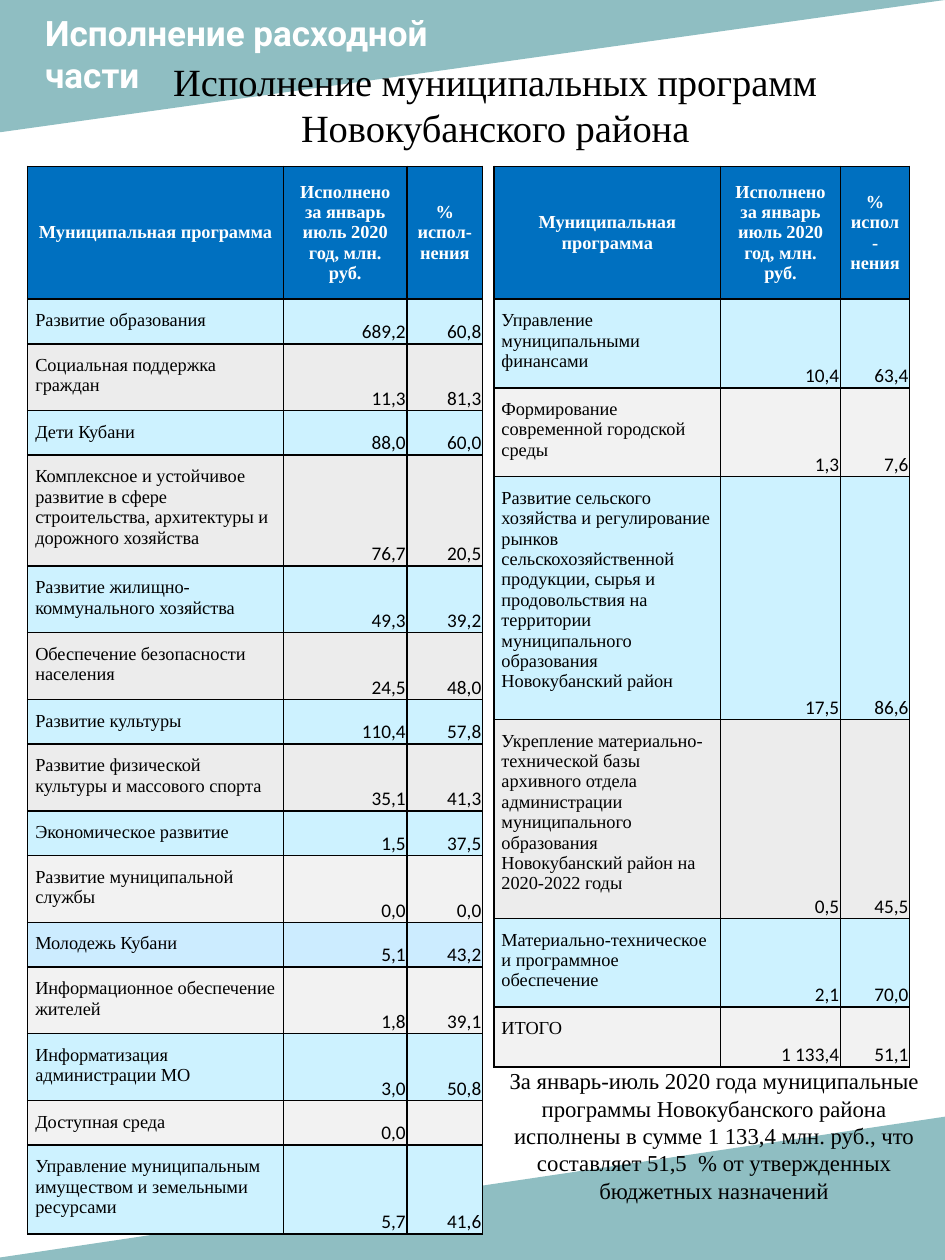
from lxml.etree import SubElement
from pptx import Presentation
from pptx.dml.color import RGBColor
from pptx.enum.shapes import MSO_SHAPE
from pptx.enum.text import MSO_ANCHOR, MSO_AUTO_SIZE, PP_ALIGN
from pptx.oxml.ns import qn
from pptx.util import Inches, Pt

TEAL = RGBColor(0x51, 0x9A, 0xA0)
HEADER_BLUE = RGBColor(0x00, 0x70, 0xC0)
CYAN = RGBColor(0xCD, 0xF2, 0xFF)
PALE_BLUE = RGBColor(0xCC, 0xEC, 0xFF)
GREY = RGBColor(0xEC, 0xEC, 0xEC)
LIGHT_GREY = RGBColor(0xF2, 0xF2, 0xF2)
WHITE = RGBColor(0xFF, 0xFF, 0xFF)
BLACK = RGBColor(0x00, 0x00, 0x00)

SERIF = "Times New Roman"
SECTION = ["Исполнение расходной", "части"]
TITLE = "Исполнение муниципальных программ Новокубанского района"
SUMMARY = ("За январь-июль 2020 года муниципальные программы Новокубанского района "
           "исполнены в сумме 1 133,4 млн. руб., что составляет 51,5  % "
           "от утвержденных бюджетных назначений")
HEADER = ("Муниципальная программа", "Исполнено за январь июль 2020 год, млн. руб.",
          "% испол-нения")

# Each row: programme, spent, percent, lines of text, fill
LEFT_ROWS = [
    ("Развитие образования", "689,2", "60,8", 1, CYAN),
    ("Социальная поддержка граждан", "11,3", "81,3", 2, GREY),
    ("Дети Кубани", "88,0", "60,0", 1, CYAN),
    ("Комплексное и устойчивое развитие в сфере строительства, архитектуры "
     "и дорожного хозяйства", "76,7", "20,5", 4, GREY),
    ("Развитие жилищно-коммунального хозяйства", "49,3", "39,2", 2, CYAN),
    ("Обеспечение безопасности населения", "24,5", "48,0", 2, GREY),
    ("Развитие культуры", "110,4", "57,8", 1, CYAN),
    ("Развитие физической культуры и массового спорта", "35,1", "41,3", 2, GREY),
    ("Экономическое развитие", "1,5", "37,5", 1, CYAN),
    ("Развитие муниципальной службы", "0,0", "0,0", 2, LIGHT_GREY),
    ("Молодежь Кубани", "5,1", "43,2", 1, PALE_BLUE),
    ("Информационное обеспечение жителей", "1,8", "39,1", 2, LIGHT_GREY),
    ("Информатизация администрации МО", "3,0", "50,8", 2, CYAN),
    ("Доступная среда", "0,0", "", 1, LIGHT_GREY),
    ("Управление муниципальным имуществом и земельными ресурсами",
     "5,7", "41,6", 3, CYAN),
]
RIGHT_ROWS = [
    ("Управление муниципальными финансами", "10,4", "63,4", 3, CYAN),
    ("Формирование современной городской среды", "1,3", "7,6", 3, LIGHT_GREY),
    ("Развитие сельского хозяйства и регулирование рынков сельскохозяйственной "
     "продукции, сырья и продовольствия на территории муниципального образования "
     "Новокубанский район", "17,5", "86,6", 10, CYAN),
    ("Укрепление материально-технической базы архивного отдела администрации "
     "муниципального образования Новокубанский район на 2020-2022 годы",
     "0,5", "45,5", 8, GREY),
    ("Материально-техническое и программное обеспечение", "2,1", "70,0", 3, CYAN),
    ("ИТОГО", "1 133,4", "51,1", 1.7, LIGHT_GREY),
]
# Left edge, column widths, rows
TABLES = [(0.22, (2.03, 0.98, 0.6), LEFT_ROWS), (3.92, (1.8, 0.95, 0.55), RIGHT_ROWS)]
TABLE_TOP = 1.32
HEADER_LINES = 5
ROW_PADDING, LINE_HEIGHT = 0.18, 0.174
TEXT_MARGINS = (0.06, 0.09, 0.06, 0.09)
NUMBER_MARGINS = (0.01, 0.01, 0.01, 0)


def add_corner(page, place, flip):
    corner = page.shapes.add_shape(MSO_SHAPE.RIGHT_TRIANGLE, *map(Inches, place))
    corner.shadow.inherit = False
    corner.line.fill.background()
    corner.fill.solid()
    corner.fill.fore_color.rgb = TEAL
    color = corner.fill._xPr.find(qn("a:solidFill"))[0]
    SubElement(color, qn("a:alpha"), val="64000")
    corner.element.spPr.find(qn("a:xfrm")).set(flip, "1")


def style(paragraph, size, font, color, bold=False, align=PP_ALIGN.LEFT):
    paragraph.alignment = align
    paragraph.font.size = Pt(size)
    paragraph.font.name = font
    paragraph.font.color.rgb = color
    paragraph.font.bold = bold


def fill_text(box, place, lines, *look):
    box.left, box.top, box.width, box.height = map(Inches, place)
    frame = box.text_frame
    frame.word_wrap = True
    frame.auto_size = MSO_AUTO_SIZE.SHAPE_TO_FIT_TEXT
    frame.vertical_anchor = MSO_ANCHOR.TOP
    frame.text = "\n".join(lines)
    for paragraph in frame.paragraphs:
        style(paragraph, *look)


def add_borders(cell):
    properties = cell._tc.get_or_add_tcPr()
    for position, side in enumerate(("a:lnL", "a:lnR", "a:lnT", "a:lnB")):
        line = properties.makeelement(qn(side), {"w": str(Pt(1))})
        SubElement(SubElement(line, qn("a:solidFill")), qn("a:srgbClr"), val=str(BLACK))
        properties.insert(position, line)


def fill_cell(cell, text, fill, margins, anchor, *look):
    cell.text = text
    cell.fill.solid()
    cell.fill.fore_color.rgb = fill
    cell.vertical_anchor = anchor
    (cell.margin_left, cell.margin_top,
     cell.margin_right, cell.margin_bottom) = map(Inches, margins)
    paragraph = cell.text_frame.paragraphs[0]
    style(paragraph, *look)
    if not text:
        SubElement(paragraph._p, qn("a:endParaRPr"), sz="1100")
    add_borders(cell)


def add_programme_table(page, left, widths, rows):
    heights = [ROW_PADDING + LINE_HEIGHT * lines
               for lines in [HEADER_LINES] + [row[3] for row in rows]]
    place = (left, TABLE_TOP, sum(widths), sum(heights))
    table = page.shapes.add_table(len(heights), len(widths), *map(Inches, place)).table
    for column, width in zip(table.columns, widths):
        column.width = Inches(width)
    for table_row, height in zip(table.rows, heights):
        table_row.height = Inches(height)
    for column, text in enumerate(HEADER):
        fill_cell(table.cell(0, column), text, HEADER_BLUE, TEXT_MARGINS,
                  MSO_ANCHOR.MIDDLE, 10.5, SERIF, WHITE, True, PP_ALIGN.CENTER)
    for index, (name, spent, percent, _, fill) in enumerate(rows, 1):
        fill_cell(table.cell(index, 0), name, fill, TEXT_MARGINS,
                  MSO_ANCHOR.TOP, 10.5, SERIF, BLACK)
        for column, value in enumerate((spent, percent), 1):
            fill_cell(table.cell(index, column), value, fill, NUMBER_MARGINS,
                      MSO_ANCHOR.BOTTOM, 11, "Calibri", BLACK, False, PP_ALIGN.RIGHT)


def main():
    deck = Presentation()
    deck.slide_width, deck.slide_height = Inches(7.5), Inches(10)
    page = deck.slides.add_slide(deck.slide_layouts[5])
    add_corner(page, (0, 0, 7.5, 1.05), "flipV")
    add_corner(page, (-0.13, 8.86, 7.65, 1.14), "flipH")

    section = page.shapes.add_textbox(0, 0, 0, 0)
    fill_text(section, (0.26, 0.04, 4.87, 0.77), SECTION, 20, "Roboto", WHITE, True)
    title = page.shapes.title
    fill_text(title, (0.64, 0.41, 6.58, 0.84), [TITLE],
              22, SERIF, BLACK, False, PP_ALIGN.CENTER)
    page.shapes._spTree.append(title.element)  # bring above the corners

    for left, widths, rows in TABLES:
        add_programme_table(page, left, widths, rows)
    summary = page.shapes.add_textbox(0, 0, 0, 0)
    fill_text(summary, (3.79, 8.42, 3.75, 1.19), [SUMMARY],
              13, SERIF, BLACK, False, PP_ALIGN.CENTER)
    deck.save("out.pptx")


if __name__ == "__main__":
    main()
